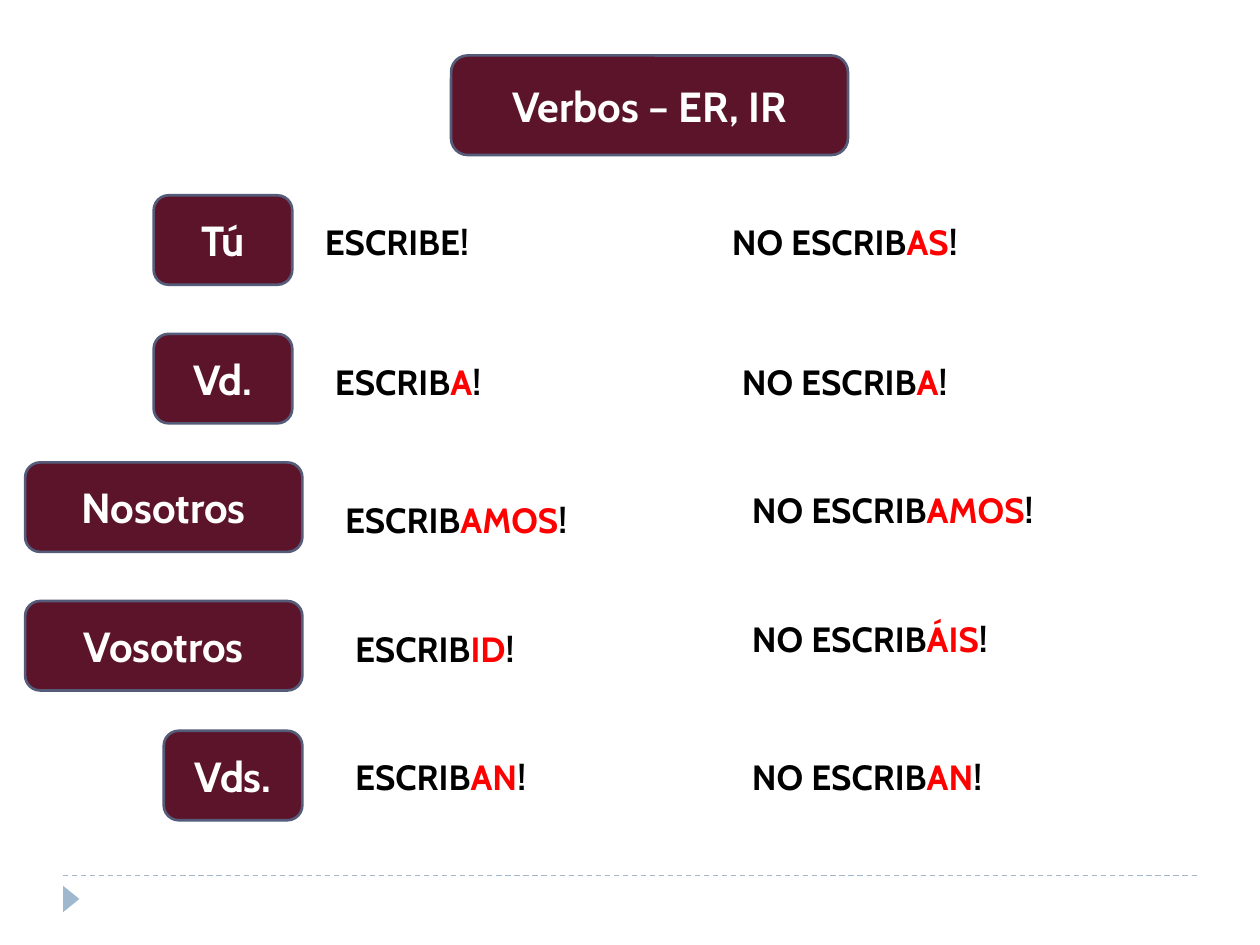
from lxml import etree
from pptx import Presentation
from pptx.dml.color import RGBColor
from pptx.enum import dml, shapes, text
from pptx.oxml import ns
from pptx.util import Inches, Pt

COLORS = {
    "box": "5C142A",
    "border": "545C79",
    "footer": "9FB8CD",
    "label": "FFFFFF",
    "stem": "000000",
    "ending": "FF0000",
}
FONT = "Cabin"
LABEL_HEIGHT = 0.71
COMMAND_HEIGHT = 0.44

ROWS = [
    ("Tú", (1.22, 1.55, 1.1), ("ESCRIBE!",), (2.48, 1.7, 1.5),
     ("NO ESCRIB", "AS", "!"), (5.71, 1.7, 2.27)),
    ("Vd.", (1.22, 2.65, 1.1), ("ESCRIB", "A", "!"), (2.56, 2.81, 1.54),
     ("NO ESCRIB", "A", "!"), (5.79, 2.81, 2.1)),
    ("Nosotros", (0.2, 3.67, 2.2), ("ESCRIB", "AMOS", "!"), (2.64, 3.91, 2.2),
     ("NO ESCRIB", "AMOS", "!"), (5.87, 3.83, 2.76)),
    ("Vosotros", (0.2, 4.77, 2.2), ("ESCRIB", "ID", "!"), (2.72, 4.93, 1.64),
     ("NO ESCRIB", "ÁIS", "!"), (5.87, 4.85, 2.36)),
    ("Vds.", (1.3, 5.8, 1.1), ("ESCRIB", "AN", "!"), (2.72, 5.95, 1.78),
     ("NO ESCRIB", "AN", "!"), (5.87, 5.95, 2.34)),
]


def color(name):
    return RGBColor.from_string(COLORS[name])


def format_run(run, size, color_name):
    run.font.name = FONT
    run.font.size = Pt(size)
    run.font.bold = True
    run.font.color.rgb = color(color_name)


def add_label(slide, wording, left, top, width, height=LABEL_HEIGHT):
    shape = slide.shapes.add_shape(
        shapes.MSO_SHAPE.ROUNDED_RECTANGLE,
        Inches(left), Inches(top), Inches(width), Inches(height))
    shape.shadow.inherit = False
    shape.fill.solid()
    shape.fill.fore_color.rgb = color("box")
    shape.line.color.rgb = color("border")
    shape.line.width = Pt(1.5)
    frame = shape.text_frame
    frame.text = wording
    frame.vertical_anchor = text.MSO_ANCHOR.MIDDLE
    paragraph = frame.paragraphs[0]
    paragraph.alignment = text.PP_ALIGN.CENTER
    format_run(paragraph.runs[0], 24, "label")


def add_command(slide, parts, left, top, width):
    box = slide.shapes.add_textbox(
        Inches(left), Inches(top), Inches(width), Inches(COMMAND_HEIGHT))
    frame = box.text_frame
    frame.word_wrap = False
    frame.auto_size = text.MSO_AUTO_SIZE.SHAPE_TO_FIT_TEXT
    paragraph = frame.paragraphs[0]
    for part, color_name in zip(parts, ("stem", "ending", "stem")):
        run = paragraph.add_run()
        run.text = part
        format_run(run, 20, color_name)


def add_row(slide, pronoun, label_box, affirmative, affirmative_box,
            negative, negative_box):
    add_label(slide, pronoun, *label_box)
    add_command(slide, affirmative, *affirmative_box)
    add_command(slide, negative, *negative_box)


def add_footer(slide, left, top, width):
    rule = slide.shapes.add_connector(
        shapes.MSO_CONNECTOR.STRAIGHT,
        Inches(left), Inches(top), Inches(left + width), Inches(top))
    rule.line.color.rgb = color("footer")
    rule.line.width = Pt(0.75)
    rule.line.dash_style = dml.MSO_LINE.DASH
    etree.SubElement(rule._element.spPr, ns.qn("a:effectLst"))

    marker = slide.shapes.add_shape(
        shapes.MSO_SHAPE.ISOSCELES_TRIANGLE,
        Inches(left - 0.04), Inches(top + 0.12), Inches(0.21), Inches(0.13))
    marker.rotation = 90
    marker.shadow.inherit = False
    marker.fill.solid()
    marker.fill.fore_color.rgb = color("footer")
    marker.line.fill.background()


def main():
    presentation = Presentation()
    presentation.slide_width = Inches(10)
    presentation.slide_height = Inches(7.5)
    slide = presentation.slides.add_slide(presentation.slide_layouts[6])
    add_footer(slide, 0.5, 6.95, 9)
    add_label(slide, "Verbos – ER, IR", 3.58, 0.44, 3.15, 0.79)
    for row in ROWS:
        add_row(slide, *row)
    presentation.save("out.pptx")


if __name__ == "__main__":
    main()
